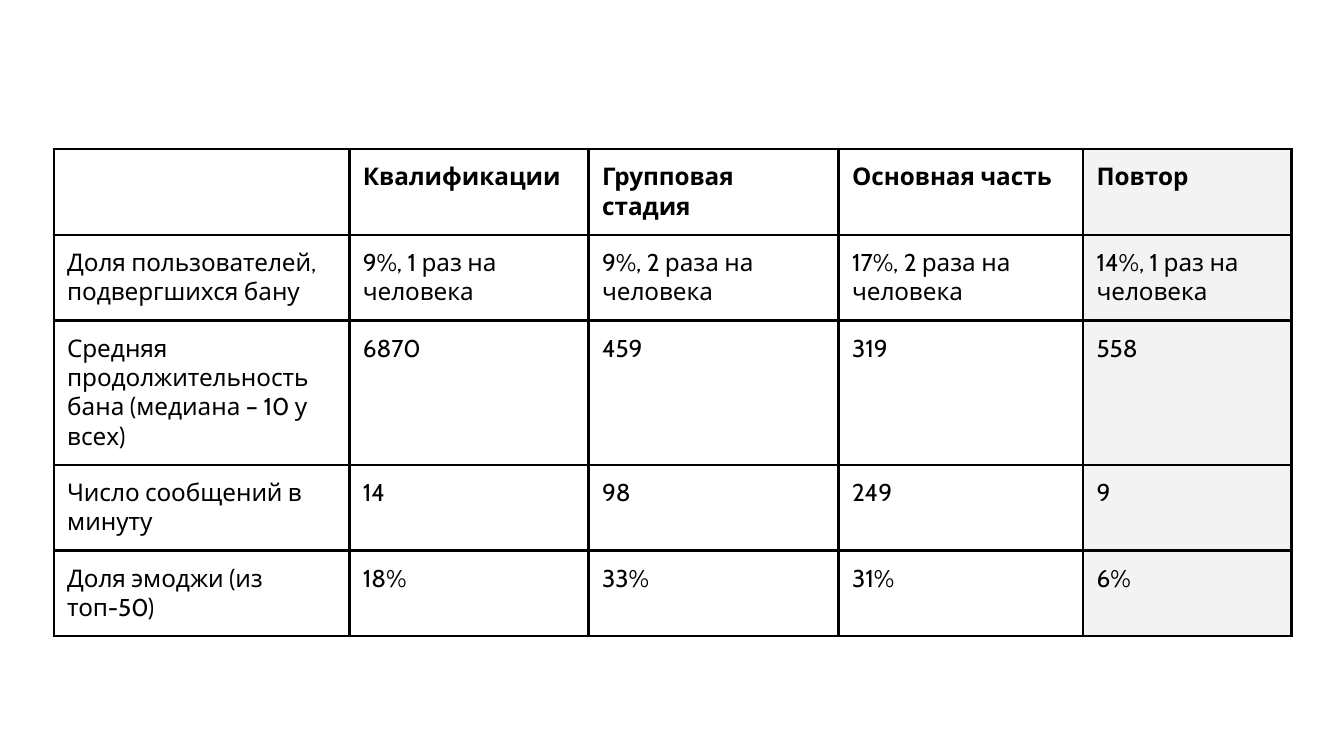
from lxml import etree
from pptx import Presentation
from pptx.dml.color import RGBColor
from pptx.oxml.ns import qn
from pptx.util import Inches, Pt

BLACK = RGBColor(0x00, 0x00, 0x00)
LIGHT_GRAY = RGBColor(0xF3, 0xF3, 0xF3)
FONT = "Cabin"

COLUMN_WIDTHS = [2.2, 1.78, 1.86, 1.82, 1.55]
ROW_HEIGHT = 0.42  # rows grow to fit their text
CELL_MARGIN = 0.1
ROWS = [
    ["", "Квалификации", "Групповая стадия", "Основная часть", "Повтор"],
    ["Доля пользователей, подвергшихся бану", "9%, 1 раз на человека",
     "9%, 2 раза на человека", "17%, 2 раза на человека",
     "14%, 1 раз на человека"],
    ["Средняя продолжительность бана (медиана – 10 у всех)",
     "6870", "459", "319", "558"],
    ["Число сообщений в минуту", "14", "98", "249", "9"],
    ["Доля эмоджи (из топ-50)", "18%", "33%", "31%", "6%"],
]


def write_text(tf, text, size=13, bold=False, color=BLACK, font=FONT):
    r = tf.paragraphs[0].add_run()
    r.text = text
    r.font.name = font
    r.font.size = Pt(size)
    r.font.bold = bold
    r.font.color.rgb = color


def set_borders(cell, color=BLACK, width=1.5):
    tc_pr = cell._tc.get_or_add_tcPr()
    for side in ("lnL", "lnR", "lnT", "lnB"):
        ln = etree.SubElement(tc_pr, qn(f"a:{side}"), w=str(Pt(width)))
        fill = etree.SubElement(ln, qn("a:solidFill"))
        etree.SubElement(fill, qn("a:srgbClr"), val=str(color))


def format_cell(cell, fill=None):
    margin = Inches(CELL_MARGIN)
    cell.margin_left = cell.margin_right = margin
    cell.margin_top = cell.margin_bottom = margin
    # Borders come before the fill in the cell properties
    set_borders(cell)
    if fill is None:
        cell.fill.background()
    else:
        cell.fill.solid()
        cell.fill.fore_color.rgb = fill


def add_stage_table(s, left, top):
    table = s.shapes.add_table(
        len(ROWS), len(COLUMN_WIDTHS), Inches(left), Inches(top),
        Inches(sum(COLUMN_WIDTHS)), Inches(ROW_HEIGHT * len(ROWS))).table
    table.first_row = False
    table.horz_banding = False
    for column, width in zip(table.columns, COLUMN_WIDTHS):
        column.width = Inches(width)

    last_column = len(COLUMN_WIDTHS) - 1
    for i, row in enumerate(ROWS):
        table.rows[i].height = Inches(ROW_HEIGHT)
        for j, text in enumerate(row):
            cell = table.cell(i, j)
            # The repeat column is shaded
            format_cell(cell, fill=LIGHT_GRAY if j == last_column else None)
            if text:
                write_text(cell.text_frame, text, bold=i == 0)


def main():
    prs = Presentation()
    # Widescreen, 16:9
    prs.slide_width = Inches(10)
    prs.slide_height = prs.slide_width * 9 // 16
    s = prs.slides.add_slide(prs.slide_layouts[6])

    # Chat statistics by tournament stage
    add_stage_table(s, left=0.4, top=1.11)

    prs.save("out.pptx")


if __name__ == "__main__":
    main()
